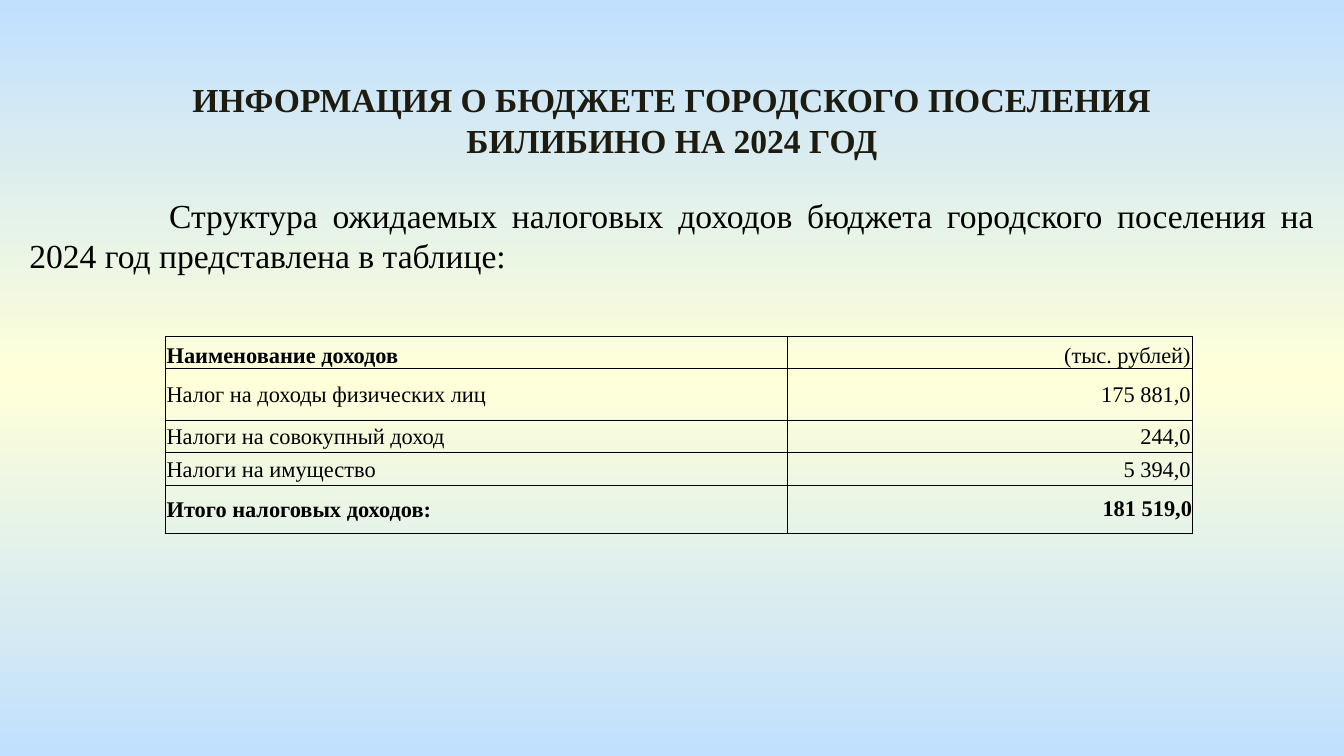
from copy import deepcopy
from lxml import etree
from pptx import Presentation
from pptx import util as u
from pptx.dml.color import RGBColor
from pptx.enum import text
from pptx.oxml.ns import qn

FACE = "Times New Roman"
AL = text.PP_ALIGN
MID, LOW = text.MSO_ANCHOR.MIDDLE, text.MSO_ANCHOR.BOTTOM


def rgb(code):
    return RGBColor.from_string(code)


def style(para, size, align, bold=False, color="000000"):
    para.alignment = align
    font = para.font
    font.name, font.size, font.bold = FACE, u.Pt(size), bold
    font.color.rgb = rgb(color)


# Slide of 16 to 9
deck = Presentation()
wide = u.Inches(10)
deck.slide_width, deck.slide_height = wide, wide * 9 // 16
slide = deck.slides.add_slide(deck.slide_layouts[6])

# Background: blue, cream, blue from top to bottom
fill = slide.background.fill
fill.gradient()
fill.gradient_angle = 90
stops = slide.element.find(".//" + qn("a:gsLst"))
stops.insert(1, deepcopy(stops[0]))
for stop, share, color in zip(fill.gradient_stops, (0, 0.5, 1),
                              ("C1E0FF", "FFFFD9", "C1E0FF")):
    stop.position = share
    stop.color.rgb = rgb(color)

# Title and lead paragraph, centred on the slide
blocks = [
    ("ИНФОРМАЦИЯ О БЮДЖЕТЕ ГОРОДСКОГО ПОСЕЛЕНИЯ БИЛИБИНО НА 2024 ГОД",
     0.54, 7.73, AL.CENTER, True, "1E1C11", 0),
    ("Структура ожидаемых налоговых доходов бюджета городского поселения "
     "на 2024 год представлена в таблице:",
     1.4, 9.76, AL.JUSTIFY, False, "000000", 1.04),
]
for words, top, span, align, bold, color, indent in blocks:
    width = u.Inches(span)
    box = slide.shapes.add_textbox((wide - width) // 2, u.Inches(top),
                                   width, u.Inches(0.71))
    frame = box.text_frame
    frame.word_wrap = True
    frame.auto_size = text.MSO_AUTO_SIZE.SHAPE_TO_FIT_TEXT
    para = frame.paragraphs[0]
    para.text = words
    style(para, 18, align, bold, color)
    if indent:
        para._p.get_or_add_pPr().set("indent", str(u.Inches(indent)))

# Table of tax income: name, sum, row height
rows = [
    ("Наименование доходов", "(тыс. рублей)", 0.24),
    ("Налог на доходы физических лиц", "175 881,0", 0.39),
    ("Налоги на совокупный доход", "244,0", 0.24),
    ("Налоги на имущество", "5 394,0", 0.24),
    ("Итого налоговых доходов:", "181 519,0", 0.36),
]
cols = (4.63, 3.01)
last = len(rows) - 1
table = slide.shapes.add_table(
    len(rows), len(cols), u.Inches(1.23), u.Inches(2.5),
    u.Inches(sum(cols)), u.Inches(sum(row[2] for row in rows))).table
table.first_row = table.horz_banding = False
for col, span in zip(table.columns, cols):
    col.width = u.Inches(span)

for r, (name, total, tall) in enumerate(rows):
    table.rows[r].height = u.Inches(tall)
    for c, words in enumerate((name, total)):
        cell = table.cell(r, c)
        cell.vertical_anchor = LOW if r == 0 else MID
        edge = 0 if (r, c) == (last, 1) else u.Inches(0.01)
        cell.margin_left = cell.margin_right = cell.margin_top = edge
        cell.margin_bottom = 0
        para = cell.text_frame.paragraphs[0]
        para.text = words
        style(para, 12, AL.RIGHT if c else AL.JUSTIFY,
              r == last or (r, c) == (0, 0))
        # Thin black border on every side
        props = cell._tc.get_or_add_tcPr()
        for side in ("lnL", "lnR", "lnT", "lnB"):
            line = etree.SubElement(props, qn("a:" + side), w=str(u.Pt(0.5)))
            paint = etree.SubElement(line, qn("a:solidFill"))
            etree.SubElement(paint, qn("a:srgbClr"), val="000000")
        cell.fill.background()

deck.save("out.pptx")
